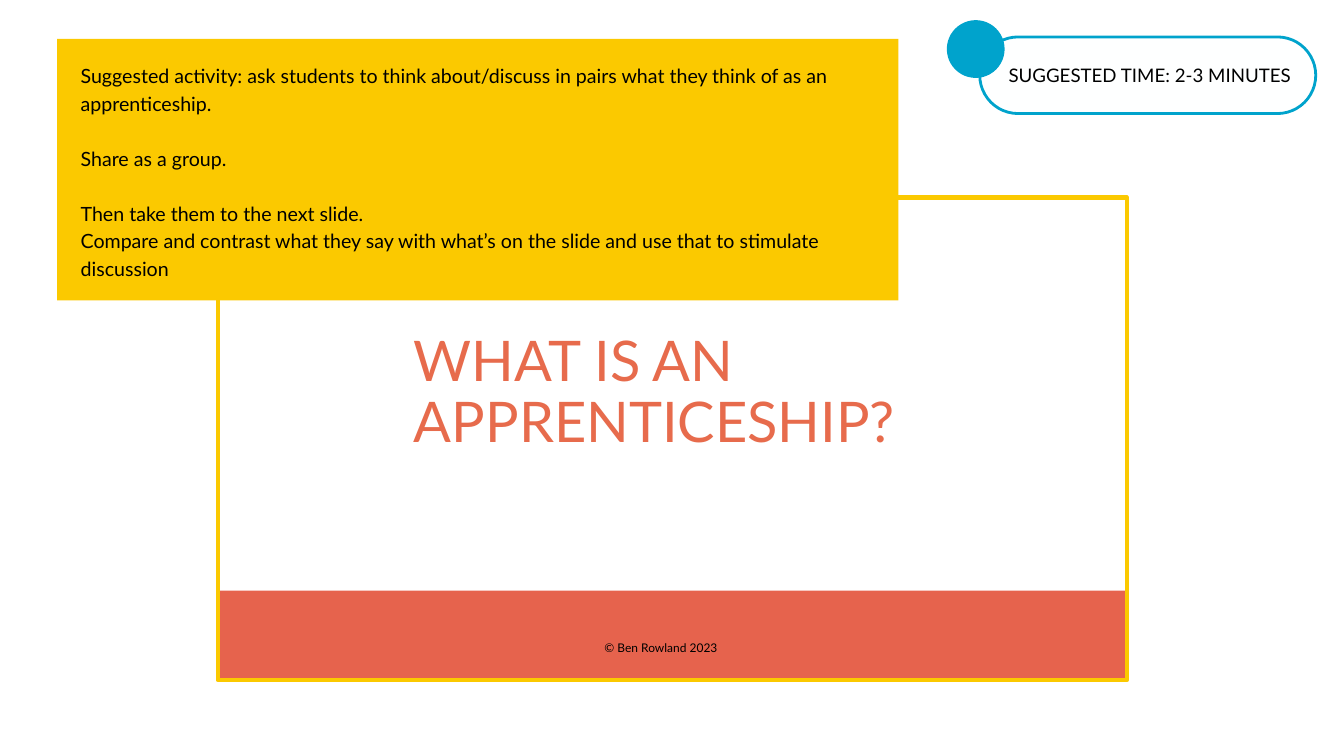
from dataclasses import dataclass

from pptx import Presentation
from pptx.dml.color import RGBColor
from pptx.enum.shapes import MSO_SHAPE
from pptx.enum.text import PP_ALIGN
from pptx.util import Emu, Pt

PX = 9144  # EMU per px, 100 px to the inch


@dataclass(frozen=True)
class Theme:
    font: str = "Lato"
    ink: str = "000000"
    paper: str = "FEFFFF"
    yellow: str = "FBC900"
    blue: str = "00A3CC"
    coral: str = "E6634D"
    title_ink: str = "E76B4C"
    title: float = 60
    body: float = 21
    label: float = 20
    footer: float = 12.8


def add_span(para, text, *, font, size, color):
    span = para.add_run()
    span.text = text
    span.font.name = font
    span.font.size = Pt(size)
    span.font.color.rgb = RGBColor.from_string(color)


class SlideBuilder:
    def __init__(self, page, theme):
        self.page = page
        self.theme = theme

    def shape(self, kind, bounds, fill=None, line=None, weight=0):
        shape = self.page.shapes.add_shape(kind, *(Emu(n * PX) for n in bounds))
        shape.shadow.inherit = False
        if fill:
            shape.fill.solid()
            shape.fill.fore_color.rgb = RGBColor.from_string(fill)
        else:
            shape.fill.background()
        if line:
            shape.line.color.rgb = RGBColor.from_string(line)
            shape.line.width = Pt(weight)
        else:
            shape.line.fill.background()
        return shape

    def text(self, bounds, paragraphs, size, leading, color=None, align=PP_ALIGN.LEFT):
        """Add (text, space before in points) paragraphs in a box without margins."""
        box = self.page.shapes.add_textbox(*(Emu(n * PX) for n in bounds))
        frame = box.text_frame
        frame.word_wrap = True
        frame.margin_left = frame.margin_right = 0
        frame.margin_top = frame.margin_bottom = 0
        for index, (text, gap) in enumerate(paragraphs):
            para = frame.add_paragraph() if index else frame.paragraphs[0]
            para.alignment = align
            para.line_spacing = Pt(leading)
            para.space_before = Pt(gap)
            add_span(para, text, font=self.theme.font, size=size,
                     color=color or self.theme.ink)


def main():
    deck = Presentation()
    deck.slide_width, deck.slide_height = Emu(2000 * PX), Emu(1125 * PX)
    page = deck.slides.add_slide(deck.slide_layouts[6])
    theme = Theme()
    builder = SlideBuilder(page, theme)

    # Title card
    builder.text((616, 492, 767, 184), [("WHAT IS AN APPRENTICESHIP?", 0)],
                 theme.title, 66, theme.title_ink)
    builder.shape(MSO_SHAPE.RECTANGLE, (324, 879, 1353, 134), fill=theme.coral)
    builder.text((899, 949, 169, 24), [("© Ben Rowland 2023", 0)],
                 theme.footer, 18, align=PP_ALIGN.CENTER)

    # Time label
    pill = builder.shape(MSO_SHAPE.ROUNDED_RECTANGLE, (1458, 55, 500, 114),
                         fill=theme.paper, line=theme.blue, weight=3)
    pill.adjustments[0] = 0.5
    builder.shape(MSO_SHAPE.OVAL, (1409, 30, 86, 86), fill=theme.blue)
    builder.text((1474, 90, 474, 38), [("SUGGESTED TIME: 2-3 MINUTES", 0)],
                 theme.label, 28, align=PP_ALIGN.CENTER)

    builder.shape(MSO_SHAPE.RECTANGLE, (324, 294, 1353, 718),
                  line=theme.yellow, weight=4.5)

    # Activity note
    leading = 29.4
    builder.shape(MSO_SHAPE.RECTANGLE, (85, 58, 1252, 389), fill=theme.yellow)
    builder.text((120, 90, 1172, 324), [
        ("Suggested activity: ask students to think about/discuss in pairs "
         "what they think of as an apprenticeship.", 0),
        ("Share as a group.", leading),
        ("Then take them to the next slide.", leading),
        ("Compare and contrast what they say with what’s on the slide "
         "and use that to stimulate discussion", 0),
    ], theme.body, leading)

    deck.save("out.pptx")


if __name__ == "__main__":
    main()
